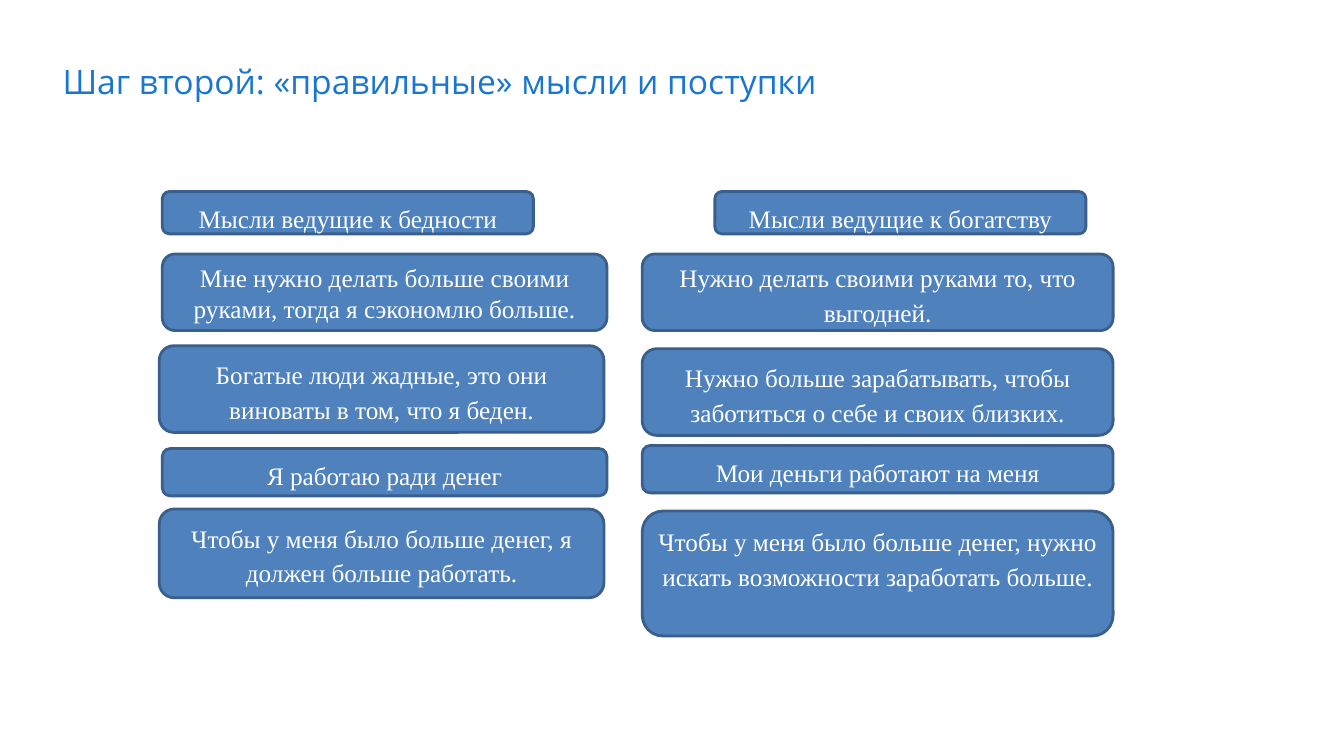
"""Build a slide that contrasts thoughts leading to poverty and to wealth."""
from pptx import Presentation
from pptx.dml.color import RGBColor
from pptx.enum.shapes import MSO_SHAPE as Shape
from pptx.enum.text import MSO_ANCHOR as Anchor, MSO_AUTO_SIZE as AutoSize, PP_ALIGN as Align
from pptx.util import Inches, Pt

COLORS = {"title": "1976D2", "fill": "4F81BD", "line": "3A5F8C", "text": "FFFFFF"}
POOR_WIDTH, RICH_LEFT, RICH_WIDTH, HEADER_WIDTH = 4.41, 6.37, 4.67, 3.68


def color(name):
    return RGBColor.from_string(COLORS[name])


def style_text(shape, text, font, size, color_name, align, anchor, spacing):
    frame = shape.text_frame
    frame.text = text
    frame.word_wrap = True
    frame.auto_size = AutoSize.NONE
    frame.vertical_anchor = anchor
    para = frame.paragraphs[0]
    para.alignment = align
    para.line_spacing = spacing
    span = para.runs[0]
    span.font.name = font
    span.font.size = Pt(size)
    span.font.color.rgb = color(color_name)


deck = Presentation()
deck.slide_width, deck.slide_height = Inches(13.33), Inches(7.5)
page = deck.slides.add_slide(deck.slide_layouts[5])

title = page.shapes.title
title.left, title.top = Inches(0.52), Inches(0.64)
title.width, title.height = Inches(10.83), Inches(0.42)
style_text(title, "Шаг второй: «правильные» мысли и поступки",
           "Open Sans", 24, "title", Align.LEFT, Anchor.BOTTOM, 0.9)

thoughts = [
    (1.61, 1.9, HEADER_WIDTH, 0.42, Anchor.TOP, 1.15, "Мысли ведущие к бедности"),
    (7.09, 1.9, HEADER_WIDTH, 0.42, Anchor.TOP, 1.15, "Мысли ведущие к богатству"),
    (1.61, 2.52, POOR_WIDTH, 0.76, Anchor.TOP, 1.0,
     "Мне нужно делать больше своими руками, тогда я сэкономлю больше."),
    (RICH_LEFT, 2.52, RICH_WIDTH, 0.76, Anchor.MIDDLE, 1.15,
     "Нужно делать своими руками то, что выгодней."),
    (1.58, 3.43, POOR_WIDTH, 0.86, Anchor.TOP, 1.15,
     "Богатые люди жадные, это они виноваты в том, что я беден."),
    (RICH_LEFT, 3.46, RICH_WIDTH, 0.86, Anchor.TOP, 1.15,
     "Нужно больше зарабатывать, чтобы заботиться о себе и своих близких."),
    (1.61, 4.45, POOR_WIDTH, 0.47, Anchor.TOP, 1.15, "Я работаю ради денег"),
    (RICH_LEFT, 4.42, RICH_WIDTH, 0.47, Anchor.TOP, 1.15, "Мои деньги работают на меня"),
    (1.58, 5.05, POOR_WIDTH, 0.88, Anchor.TOP, 1.15,
     "Чтобы у меня было больше денег, я должен больше работать."),
    (RICH_LEFT, 5.07, RICH_WIDTH, 1.24, Anchor.TOP, 1.15,
     "Чтобы у меня было больше денег, нужно искать возможности заработать больше."),
]

for left, top, width, height, anchor, spacing, text in thoughts:
    box = page.shapes.add_shape(Shape.ROUNDED_RECTANGLE, Inches(left), Inches(top),
                                Inches(width), Inches(height))
    box.shadow.inherit = False
    box.fill.solid()
    box.fill.fore_color.rgb = color("fill")
    box.line.color.rgb = color("line")
    box.line.width = Pt(2)
    style_text(box, text, "Times New Roman", 18, "text", Align.CENTER, anchor, spacing)

deck.save("out.pptx")
